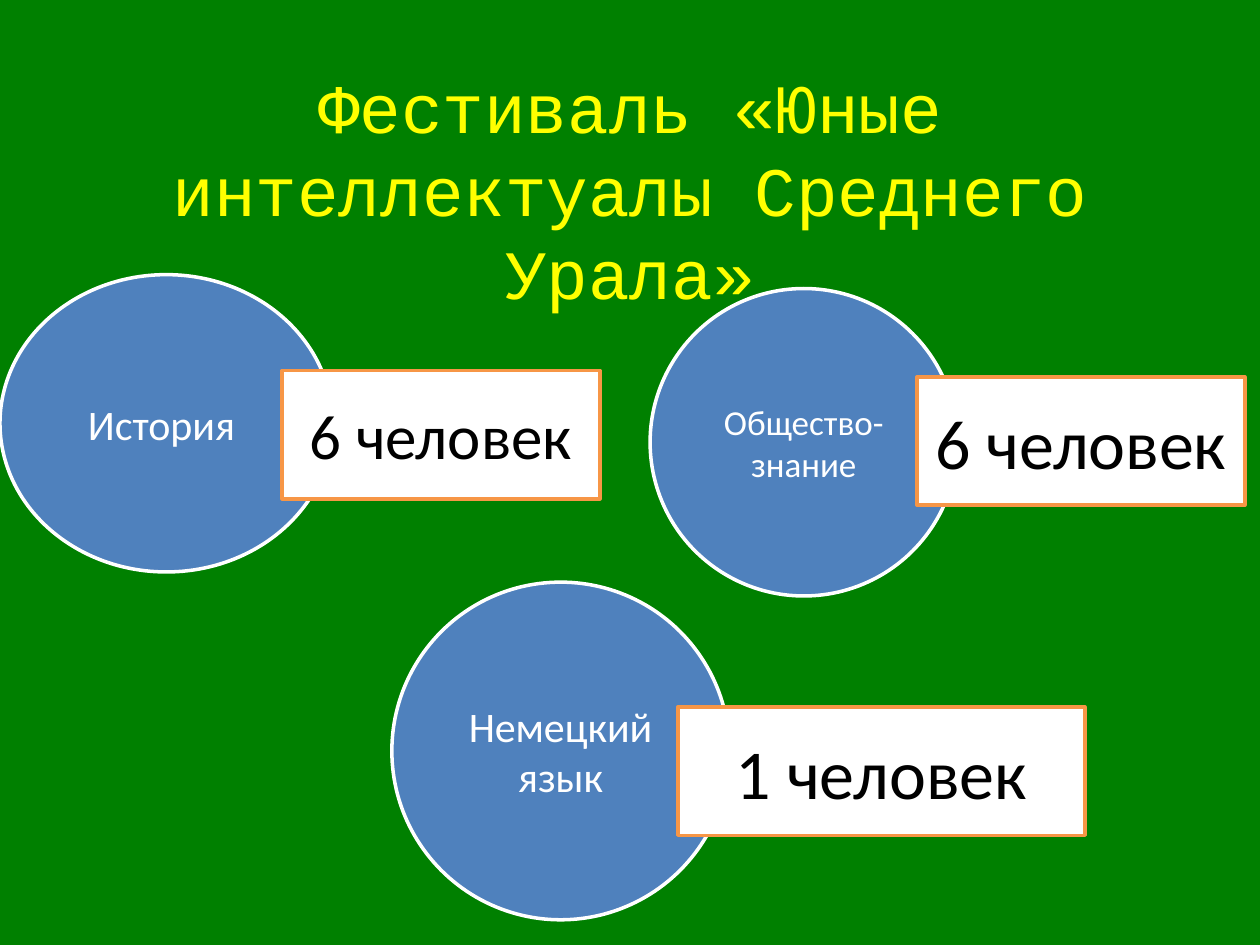
from pptx import Presentation
from pptx.dml.color import RGBColor
from pptx.enum.shapes import MSO_SHAPE as Shape
from pptx.enum.text import MSO_ANCHOR as Anchor, PP_ALIGN as Align
from pptx.util import Inches, Pt

COLORS = {
    "background": "008000",
    "title": "FFFF00",
    "subject": "4F81BD",
    "white": "FFFFFF",
    "count_border": "F79646",
    "black": "000000",
}

SUBJECTS = [
    (["История "], 24, (0, 2.18, 2.64, 2.36)),
    (["Общество-знание"], 20, (5.16, 2.29, 2.44, 2.44)),
    (["Немецкий", "язык"], 24, (3.11, 4.62, 2.68, 2.68)),
]

COUNTS = [
    ("6 человек", 36, (2.24, 2.94, 2.52, 1.02)),
    ("6 человек", 40, (7.28, 2.99, 2.6, 1.02)),
    ("1 человек", 40, (5.38, 5.61, 3.23, 1.02)),
]


def color(name):
    return RGBColor.from_string(COLORS[name])


def add_run(paragraph, text, size, font, ink):
    paragraph.alignment = Align.CENTER
    run = paragraph.add_run()
    run.text = text
    run.font.size = Pt(size)
    run.font.name = font
    run.font.color.rgb = color(ink)


def set_title(slide):
    title = slide.shapes.title
    title.left, title.top = Inches(0.75), Inches(0.78)
    title.width, title.height = Inches(8.5), Inches(0.78)
    frame = title.text_frame
    frame.word_wrap = True
    frame.vertical_anchor = Anchor.MIDDLE
    heading = frame.paragraphs[0]
    heading.font.size = Pt(39.6)
    heading.add_line_break()
    add_run(heading, "Фестиваль «Юные интеллектуалы Среднего Урала»",
            39.6, "Courier New", "title")


def add_label(slide, outline, lines, size, box, fill, border, ink):
    label = slide.shapes.add_shape(outline, *map(Inches, box))
    label.shadow.inherit = False
    label.fill.solid()
    label.fill.fore_color.rgb = color(fill)
    label.line.color.rgb = color(border)
    label.line.width = Pt(2)
    frame = label.text_frame
    frame.word_wrap = True
    frame.vertical_anchor = Anchor.MIDDLE
    for index, line in enumerate(lines):
        paragraph = frame.add_paragraph() if index else frame.paragraphs[0]
        add_run(paragraph, line, size, "Calibri", ink)


def main():
    deck = Presentation()
    deck.slide_width, deck.slide_height = Inches(10), Inches(7.5)
    slide = deck.slides.add_slide(deck.slide_layouts.get_by_name("Title Only"))
    slide.background.fill.solid()
    slide.background.fill.fore_color.rgb = color("background")
    set_title(slide)
    for lines, size, box in SUBJECTS:
        add_label(slide, Shape.OVAL, lines, size, box, "subject", "white", "white")
    for count, size, box in COUNTS:
        add_label(slide, Shape.RECTANGLE, [count], size, box,
                  "white", "count_border", "black")
    deck.save("out.pptx")


if __name__ == "__main__":
    main()
